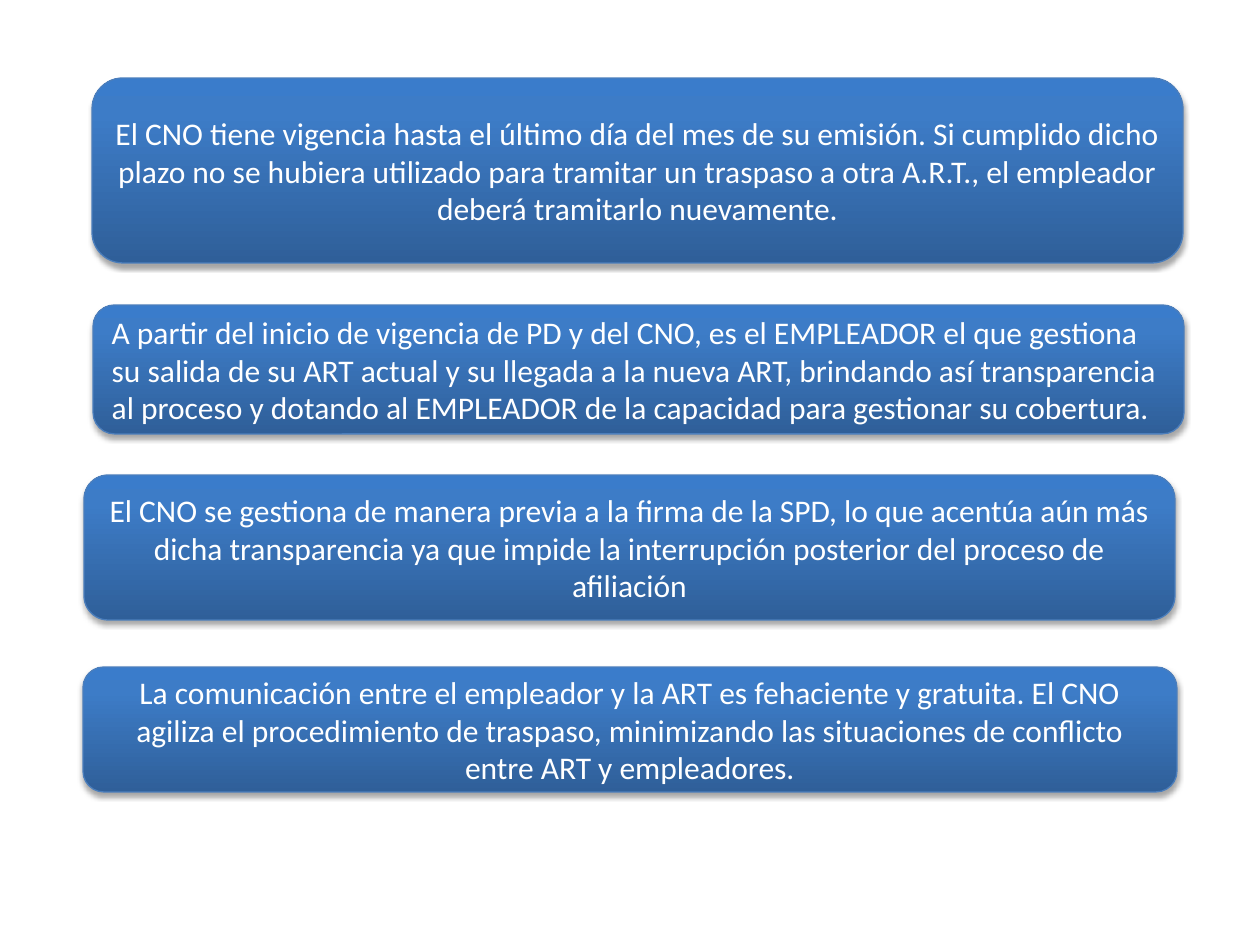
from copy import deepcopy

from lxml import etree
from pptx import Presentation
from pptx import util as u
from pptx.dml.color import RGBColor
from pptx.enum import shapes, text
from pptx.oxml.ns import qn

PX = 914400 / 126
GRADIENT = [(0, "2F5F99"), (0.8, "3D7CC7"), (1, "3A7CCB")]
CENTER, LEFT = text.PP_ALIGN.CENTER, text.PP_ALIGN.LEFT

PANELS = [
    ((92, 78, 1091, 185), CENTER,
     "El CNO tiene vigencia hasta el último día del mes de su emisión. Si cumplido dicho "
     "plazo no se hubiera utilizado para tramitar un traspaso a otra A.R.T., el empleador "
     "deberá tramitarlo nuevamente."),
    ((93, 305, 1091, 129), LEFT,
     "A partir del inicio de vigencia de PD y del CNO, es el EMPLEADOR el que gestiona "
     "su salida de su ART actual y su llegada a la nueva ART, brindando así transparencia "
     "al proceso y dotando al EMPLEADOR de la capacidad para gestionar su cobertura."),
    ((84, 475, 1091, 145), CENTER,
     "El CNO se gestiona de manera previa a la firma de la SPD, lo que acentúa aún más "
     "dicha transparencia ya que impide la interrupción posterior del proceso de afiliación"),
    ((83, 667, 1094, 125), CENTER,
     "La comunicación entre el empleador y la ART es fehaciente y gratuita. El CNO "
     "agiliza el procedimiento de traspaso, minimizando las situaciones de conflicto "
     "entre ART y empleadores."),
]


def px(n):
    """Convert pixels to EMU."""
    return u.Emu(round(n * PX))


def rgb(value):
    """Turn a hex string into a colour."""
    return RGBColor.from_string(value)


def fill_gradient(sp):
    """Fill a shape with the vertical blue gradient."""
    sp.fill.gradient()
    sp.fill.gradient_angle = 90
    stops = sp._element.spPr.find(qn("a:gradFill")).find(qn("a:gsLst"))
    stops.append(deepcopy(stops[-1]))
    for stop, (position, color) in zip(sp.fill.gradient_stops, GRADIENT):
        stop.position = position
        stop.color.rgb = rgb(color)


def add_shadow(sp):
    """Give a shape a soft shadow straight below it."""
    sp.shadow.inherit = False
    effects = sp._element.spPr.find(qn("a:effectLst"))
    shadow = etree.SubElement(effects, qn("a:outerShdw"), blurRad=str(u.Pt(3.1)),
                              dist=str(u.Pt(1.8)), dir="5400000", rotWithShape="0")
    color = etree.SubElement(shadow, qn("a:srgbClr"), val="000000")
    etree.SubElement(color, qn("a:alpha"), val="35000")


def add_panel(s, box, align, words):
    """Place one rounded panel with its statement in the given box."""
    sp = s.shapes.add_shape(shapes.MSO_SHAPE.ROUNDED_RECTANGLE, *map(px, box))
    fill_gradient(sp)
    sp.line.color.rgb = rgb("4B7EBC")
    sp.line.width = u.Pt(0.75)
    add_shadow(sp)
    tf = sp.text_frame
    tf.word_wrap = True
    tf.vertical_anchor = text.MSO_ANCHOR.MIDDLE
    p = tf.paragraphs[0]
    p.text = words
    p.alignment = align
    p.font.name = "Calibri"
    p.font.size = u.Pt(18)
    p.font.color.rgb = rgb("FFFFFF")


def main():
    """Build the slide and save it."""
    prs = Presentation()
    prs.slide_width, prs.slide_height = px(1260), px(945)
    s = prs.slides.add_slide(prs.slide_layouts[6])
    for box, align, words in PANELS:
        add_panel(s, box, align, words)
    prs.save("out.pptx")


if __name__ == "__main__":
    main()
